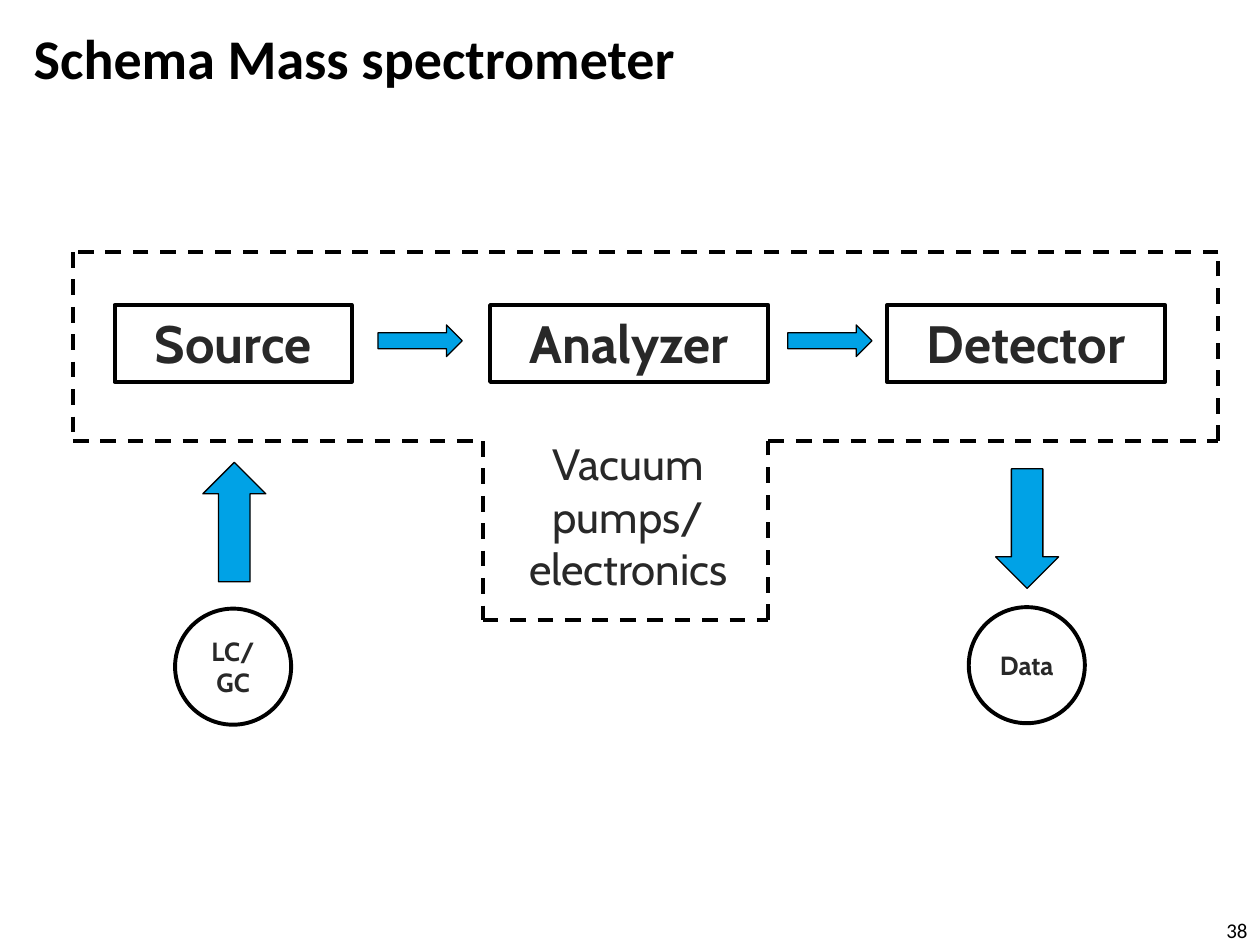
from pptx import Presentation, util as u
from pptx.dml.color import RGBColor
from pptx.enum import dml, shapes, text
from pptx.oxml.ns import qn
from lxml import etree

THEME = {
    "ink": RGBColor(0, 0, 0), "label": RGBColor(0x28, 0x28, 0x28),
    "arrow": RGBColor(0x00, 0xA2, 0xE6), "paper": RGBColor(255, 255, 255),
    "heading_font": "Calibri", "label_font": "Cabin",
    "title": 32, "stage": 30, "support": 25, "port": 15, "number": 12,
    "border": 2.25, "thin": 0.75,
}
KIND = shapes.MSO_SHAPE
ALIGN = text.PP_ALIGN
MIDDLE, TOP = text.MSO_ANCHOR.MIDDLE, text.MSO_ANCHOR.TOP

# Content; all lengths in cm
HEADING = ("Schema Mass spectrometer", (0.43, 0.2, 18.62, 1.9))
PAGE_NUMBER = ("38", (19.05, 18.47, 6.35, 0.58))
STAGES = [("Source", 2.31, 4.78), ("Analyzer", 9.88, 5.61), ("Detector", 17.88, 5.61)]
STAGE_TOP, STAGE_HEIGHT = 6.15, 1.55
PORTS = [("LC/ GC", 3.53, 12.27), ("Data", 19.53, 12.24)]
PORT_SIZE = 2.34
SUPPORT = ("Vacuum pumps/ electronics", (9.86, 8.69, 5.61, 3.45))
# T-shaped vacuum boundary
LEFT, STEM_LEFT, STEM_RIGHT, RIGHT = 1.47, 9.73, 15.49, 24.56
ROOF, FLOOR, STEM_FLOOR = 5.08, 8.89, 12.5
BOUNDARY = [(LEFT, ROOF), (LEFT, FLOOR), (STEM_LEFT, FLOOR), (STEM_LEFT, STEM_FLOOR),
            (STEM_RIGHT, STEM_FLOOR), (STEM_RIGHT, FLOOR), (RIGHT, FLOOR), (RIGHT, ROOF)]
# Preset, left, top, width, height, rotation
ARROWS = [(KIND.UP_ARROW, 4.09, 9.32, 1.27, 2.41, 0),
          (KIND.RIGHT_ARROW, 7.62, 6.55, 1.7, 0.64, 0),
          (KIND.RIGHT_ARROW, 15.88, 6.55, 1.7, 0.64, 0),
          (KIND.UP_ARROW, 20.07, 9.45, 1.27, 2.41, 180)]


def cm(lengths):
    return [u.Cm(length) for length in lengths]


def write(holder, words, size, font, color, align, bold=False, anchor=MIDDLE):
    frame = holder.text_frame
    frame.word_wrap = True
    frame.vertical_anchor = anchor
    frame.text = words
    paragraph = frame.paragraphs[0]
    paragraph.alignment = align
    paragraph.font.name = THEME[font]
    paragraph.font.size = u.Pt(THEME[size])
    paragraph.font.bold = bold
    paragraph.font.color.rgb = THEME[color]


def outline(part, color="ink", width="border"):
    part.line.color.rgb = THEME[color]
    part.line.width = u.Pt(THEME[width])


def add_label(slide, kind, place, words, size, bold=True, anchor=TOP, border="ink"):
    label = slide.shapes.add_shape(kind, *cm(place))
    label.shadow.inherit = False
    label.fill.background()
    outline(label, border)
    write(label, words, size, "label_font", "label", ALIGN.CENTER, bold, anchor)


def add_heading(slide, content, size, align, bold):
    words, place = content
    heading = slide.shapes.add_textbox(*cm(place))
    write(heading, words, size, "heading_font", "ink", align, bold)


def main():
    deck = Presentation()
    deck.slide_width, deck.slide_height = cm((25.4, 19.05))
    slide = deck.slides.add_slide(deck.slide_layouts[6])

    add_heading(slide, HEADING, "title", ALIGN.LEFT, True)

    # Instrument stages, inlet and outlet, supporting equipment
    for words, left, width in STAGES:
        add_label(slide, KIND.RECTANGLE, (left, STAGE_TOP, width, STAGE_HEIGHT), words, "stage")
    for words, left, top in PORTS:
        add_label(slide, KIND.OVAL, (left, top, PORT_SIZE, PORT_SIZE), words, "port",
                  anchor=MIDDLE)
    words, place = SUPPORT
    add_label(slide, KIND.RECTANGLE, place, words, "support", bold=False, border="paper")

    # Dashed vacuum boundary
    for start, end in zip(BOUNDARY, BOUNDARY[1:] + BOUNDARY[:1]):
        side = slide.shapes.add_connector(shapes.MSO_CONNECTOR.STRAIGHT, *cm(start + end))
        outline(side)
        side.line.dash_style = dml.MSO_LINE.DASH
        etree.SubElement(side._element.spPr, qn("a:effectLst"))

    # Flow arrows
    for kind, *place, rotation in ARROWS:
        arrow = slide.shapes.add_shape(kind, *cm(place))
        arrow.shadow.inherit = False
        arrow.rotation = rotation
        arrow.fill.solid()
        arrow.fill.fore_color.rgb = THEME["arrow"]
        outline(arrow, width="thin")

    add_heading(slide, PAGE_NUMBER, "number", ALIGN.RIGHT, False)
    deck.save("out.pptx")


if __name__ == "__main__":
    main()
